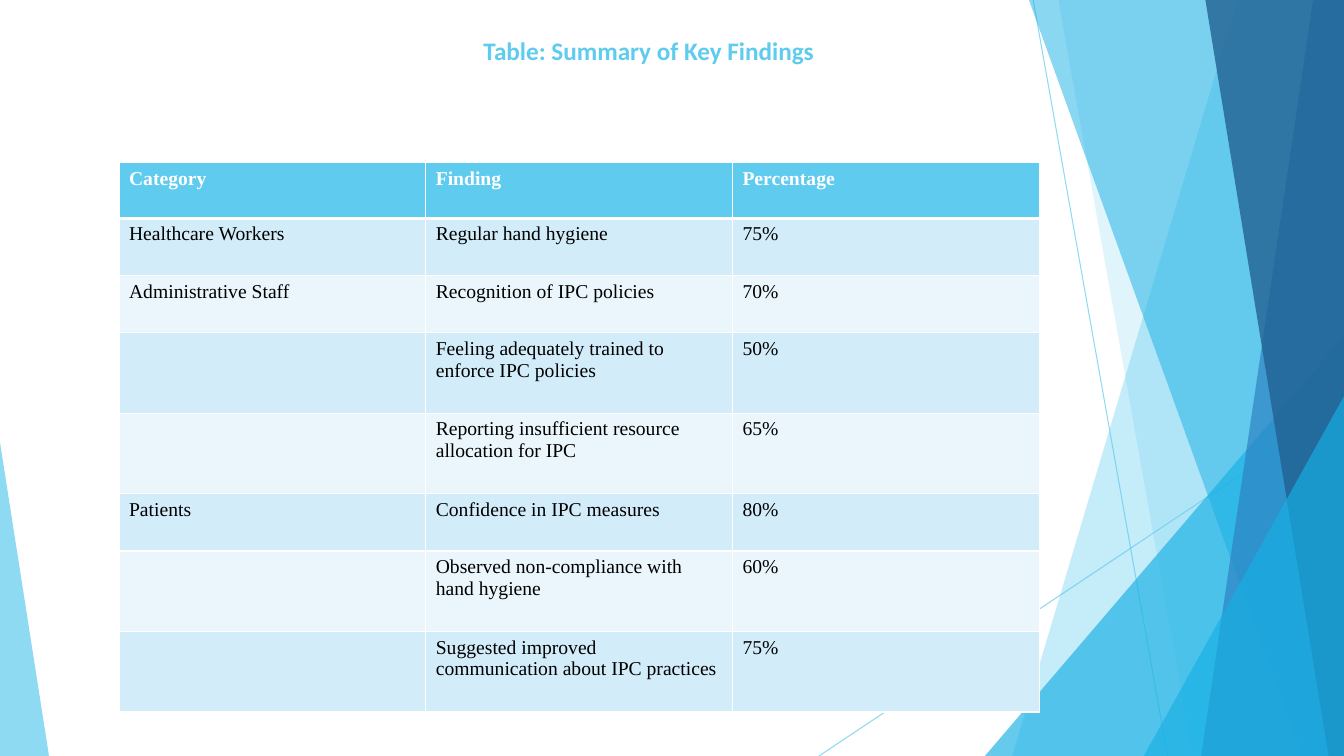
from lxml import etree
from pptx import Presentation, util as u
from pptx.dml.color import RGBColor
from pptx.enum import shapes, text
from pptx.oxml import parse_xml
from pptx.oxml.ns import nsdecls, qn

Pt = u.Pt
COLORS = {"white": "FFFFFF", "black": "000000", "sky": "5FCBEF", "cyan": "17B0E4",
          "blue": "2E83C3", "navy": "226292", "band": "D2ECF9", "pale": "EAF6FC"}
WIDTH, HEIGHT = 960, 540

ROWS = [
    ("Category", "Finding", "Percentage"),
    ("Healthcare Workers", "Regular hand hygiene", "75%"),
    ("Administrative Staff", "Recognition of IPC policies", "70%"),
    ("", "Feeling adequately trained to enforce IPC policies", "50%"),
    ("", "Reporting insufficient resource allocation for IPC", "65%"),
    ("Patients", "Confidence in IPC measures", "80%"),
    ("", "Observed non-compliance with hand hygiene", "60%"),
    ("", "Suggested improved communication about IPC practices", "75%"),
]
ROW_HEIGHTS = [39.8, 40.9, 40.9, 57.5, 57.5, 40.9, 57.5, 57.5]


def rgb(name):
    """Return the named colour."""
    return RGBColor.from_string(COLORS[name])


def set_all(target, values):
    """Set each attribute in a dict of format values."""
    for key, value in values.items():
        setattr(target, key, value)


def set_alpha(sp, percent):
    """Make the shape's own colour partly transparent."""
    color = next(sp._element.spPr.iter(qn("a:srgbClr")))
    etree.SubElement(color, qn("a:alpha")).set("val", str(percent * 1000))


def paint(sp, color, alpha):
    """Give a shape a transparent fill without outline or shadow."""
    sp.shadow.inherit = False
    sp.fill.solid()
    sp.fill.fore_color.rgb = rgb(color)
    sp.line.fill.background()
    set_alpha(sp, alpha)


def add_ray(s, x1, y1, x2, y2):
    """Draw a thin diagonal line."""
    sp = s.shapes.add_connector(shapes.MSO_CONNECTOR.STRAIGHT, Pt(x1), Pt(y1), Pt(x2), Pt(y2))
    sp.line.width = Pt(0.75)
    sp.line.color.rgb = rgb("sky")
    set_alpha(sp, 70)
    etree.SubElement(sp._element.spPr, qn("a:effectLst"))


def add_shard(s, top_x, bottom_x, color, alpha):
    """Draw a full-height shard from a slanted edge to the right side."""
    builder = s.shapes.build_freeform(top_x, 0, scale=Pt(1))
    builder.add_line_segments([(WIDTH, 0), (WIDTH, HEIGHT), (bottom_x, HEIGHT)])
    paint(builder.convert_to_shape(), color, alpha)


def add_corner(s, x, y, w, apex, color, alpha):
    """Draw a triangle standing on the bottom edge."""
    sp = s.shapes.add_shape(shapes.MSO_SHAPE.ISOSCELES_TRIANGLE,
                            Pt(x), Pt(y), Pt(w), Pt(HEIGHT - y))
    sp.adjustments[0] = apex
    paint(sp, color, alpha)


def add_facets(s):
    """Draw the overlapping background facets from back to front."""
    add_ray(s, 738, 0, 834, HEIGHT)
    add_ray(s, WIDTH, 290, 585, HEIGHT)
    add_shard(s, 884, 723, "sky", 36)
    add_shard(s, 756, 852, "sky", 20)
    add_corner(s, 703.5, 240, 256.5, 1, "cyan", 66)
    add_shard(s, 735, 930, "cyan", 50)
    add_shard(s, 938, 858, "blue", 70)
    add_shard(s, 861, 949, "navy", 80)
    add_corner(s, 817, 283, 143, 1, "cyan", 66)
    add_corner(s, 0, 316, 35, 0, "sky", 70)


def add_title(s, x, y, w, h):
    """Place and format the title in its box."""
    sp = s.shapes.title
    set_all(sp, {"left": Pt(x), "top": Pt(y), "width": Pt(w), "height": Pt(h)})
    sp.fill.solid()
    sp.fill.fore_color.rgb = rgb("white")
    tf = sp.text_frame
    set_all(tf, {"margin_left": 0, "margin_right": 0, "margin_top": Pt(12), "margin_bottom": Pt(8),
                 "word_wrap": True, "auto_size": text.MSO_AUTO_SIZE.NONE,
                 "vertical_anchor": text.MSO_ANCHOR.TOP})
    p = tf.paragraphs[0]
    p.alignment = text.PP_ALIGN.CENTER
    r = p.add_run()
    r.text = "Table: Summary of Key Findings"
    set_all(r.font, {"name": "Calibri", "size": Pt(18), "bold": True})
    r.font.color.rgb = rgb("sky")


def set_borders(cell, widths):
    """Draw white borders on the left, right, top and bottom."""
    for i, (side, width) in enumerate(zip("LRTB", widths)):
        cell._tc.get_or_add_tcPr().insert(i, parse_xml(
            f'<a:ln{side} {nsdecls("a")} w="{Pt(width)}"><a:solidFill>'
            f'<a:srgbClr val="{COLORS["white"]}"/></a:solidFill></a:ln{side}>'))


def add_findings(s, x, y, w):
    """Build the findings table in its box."""
    columns = len(ROWS[0])
    table = s.shapes.add_table(len(ROWS), columns, Pt(x), Pt(y), Pt(w), Pt(sum(ROW_HEIGHTS))).table
    table.horz_banding = False
    for column in table.columns:
        column.width = Pt(w / columns)
    for i, (values, height) in enumerate(zip(ROWS, ROW_HEIGHTS)):
        table.rows[i].height = Pt(height)
        header = i == 0
        fill = "sky" if header else "band" if i % 2 else "pale"
        for j, value in enumerate(values):
            cell = table.cell(i, j)
            cell.fill.solid()
            cell.fill.fore_color.rgb = rgb(fill)
            set_borders(cell, (1, 1, 3 if i == 1 else 1, 3 if header else 1))
            if value:
                r = cell.text_frame.paragraphs[0].add_run()
                r.text = value
                set_all(r.font, {"name": "Times New Roman", "size": Pt(14), "bold": header})
                r.font.color.rgb = rgb("white" if header else "black")


def main():
    """Build and save the slide."""
    prs = Presentation()
    set_all(prs, {"slide_width": Pt(WIDTH), "slide_height": Pt(HEIGHT)})
    s = prs.slides.add_slide(prs.slide_layouts[5])
    add_facets(s)
    add_title(s, 239, 13, 449, 64)
    add_findings(s, 85, 116.2, 657.3)
    prs.save("out.pptx")


if __name__ == "__main__":
    main()
